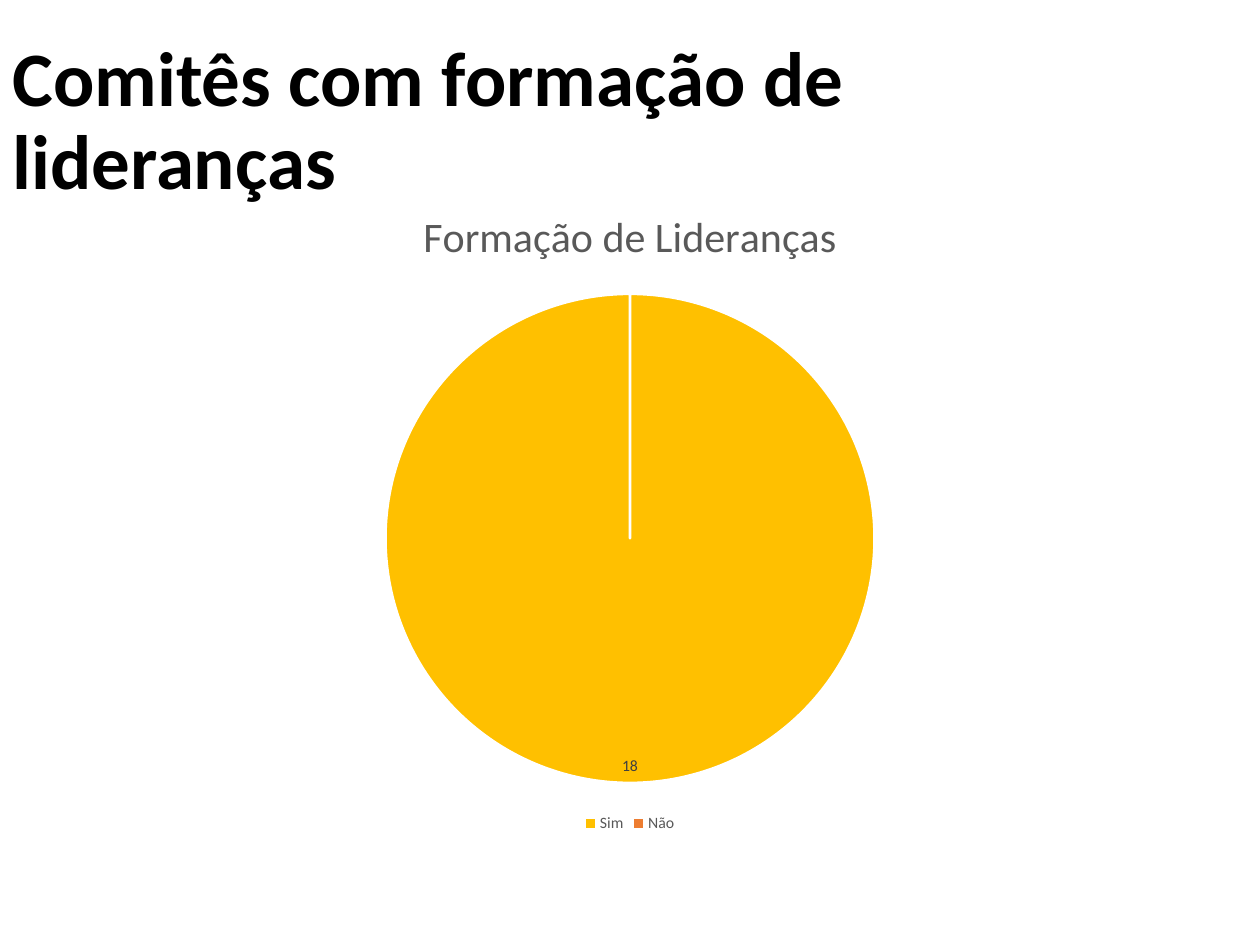
"""Build a slide with a pie chart of the committees that train leaders."""
import pptx
import pptx.chart.data
import pptx.dml.color
import pptx.enum.chart
import pptx.enum.text
import pptx.util

BLACK = pptx.dml.color.RGBColor(0x00, 0x00, 0x00)
WHITE = pptx.dml.color.RGBColor(0xFF, 0xFF, 0xFF)
GRAY = pptx.dml.color.RGBColor(0x59, 0x59, 0x59)
DARK = pptx.dml.color.RGBColor(0x40, 0x40, 0x40)
GOLD = pptx.dml.color.RGBColor(0xFF, 0xC0, 0x00)
ORANGE = pptx.dml.color.RGBColor(0xED, 0x7D, 0x31)


def set_font(font, size, color, bold=False):
    font.name = "Calibri"
    font.size = pptx.util.Pt(size)
    font.color.rgb = color
    font.bold = bold


prs = pptx.Presentation()
prs.slide_width = pptx.util.Inches(10)
prs.slide_height = pptx.util.Inches(7.5)
W, H = prs.slide_width, prs.slide_height
s = prs.slides.add_slide(prs.slide_layouts[5])

sp = s.shapes.title
sp.left, sp.top = 0, int(H / 30)
sp.width, sp.height = int(W * 0.93), pptx.util.Inches(1.45)
tf = sp.text_frame
tf.word_wrap = True
tf.auto_size = pptx.enum.text.MSO_AUTO_SIZE.NONE
tf.vertical_anchor = pptx.enum.text.MSO_ANCHOR.MIDDLE
p = tf.paragraphs[0]
p.alignment = pptx.enum.text.PP_ALIGN.LEFT
p.line_spacing = 0.9
r = p.add_run()
r.text = "Comitês com formação de lideranças"
set_font(r.font, 44, BLACK, True)

data = pptx.chart.data.CategoryChartData()
data.categories = ["Sim", "Não"]
data.add_series("Formação de Lideranças", (18, 0))
chart_w, chart_h = pptx.util.Inches(7.25), pptx.util.Inches(5.22)
chart = s.shapes.add_chart(
    pptx.enum.chart.XL_CHART_TYPE.PIE, (W - chart_w) // 2,
    pptx.util.Inches(1.43), chart_w, chart_h, data).chart
set_font(chart.font, 10, BLACK)

chart.has_title = True
p = chart.chart_title.text_frame.paragraphs[0]
r = p.add_run()
r.text = "Formação de Lideranças"
set_font(r.font, 24, GRAY)
chart.chart_title.include_in_layout = False

chart.has_legend = True
chart.legend.position = pptx.enum.chart.XL_LEGEND_POSITION.BOTTOM
chart.legend.include_in_layout = False
set_font(chart.legend.font, 9, GRAY)

plot = chart.plots[0]
plot.vary_by_categories = True
series = plot.series[0]
for i, color in enumerate((GOLD, ORANGE)):
    fmt = series.points[i].format
    fmt.fill.solid()
    fmt.fill.fore_color.rgb = color
    fmt.line.color.rgb = WHITE
    fmt.line.width = pptx.util.Pt(1.5)

labels = series.data_labels
labels.show_value = True
labels.number_format = "#"
labels.number_format_is_linked = False
labels.position = pptx.enum.chart.XL_LABEL_POSITION.INSIDE_END
set_font(labels.font, 9, DARK)

prs.save("out.pptx")
